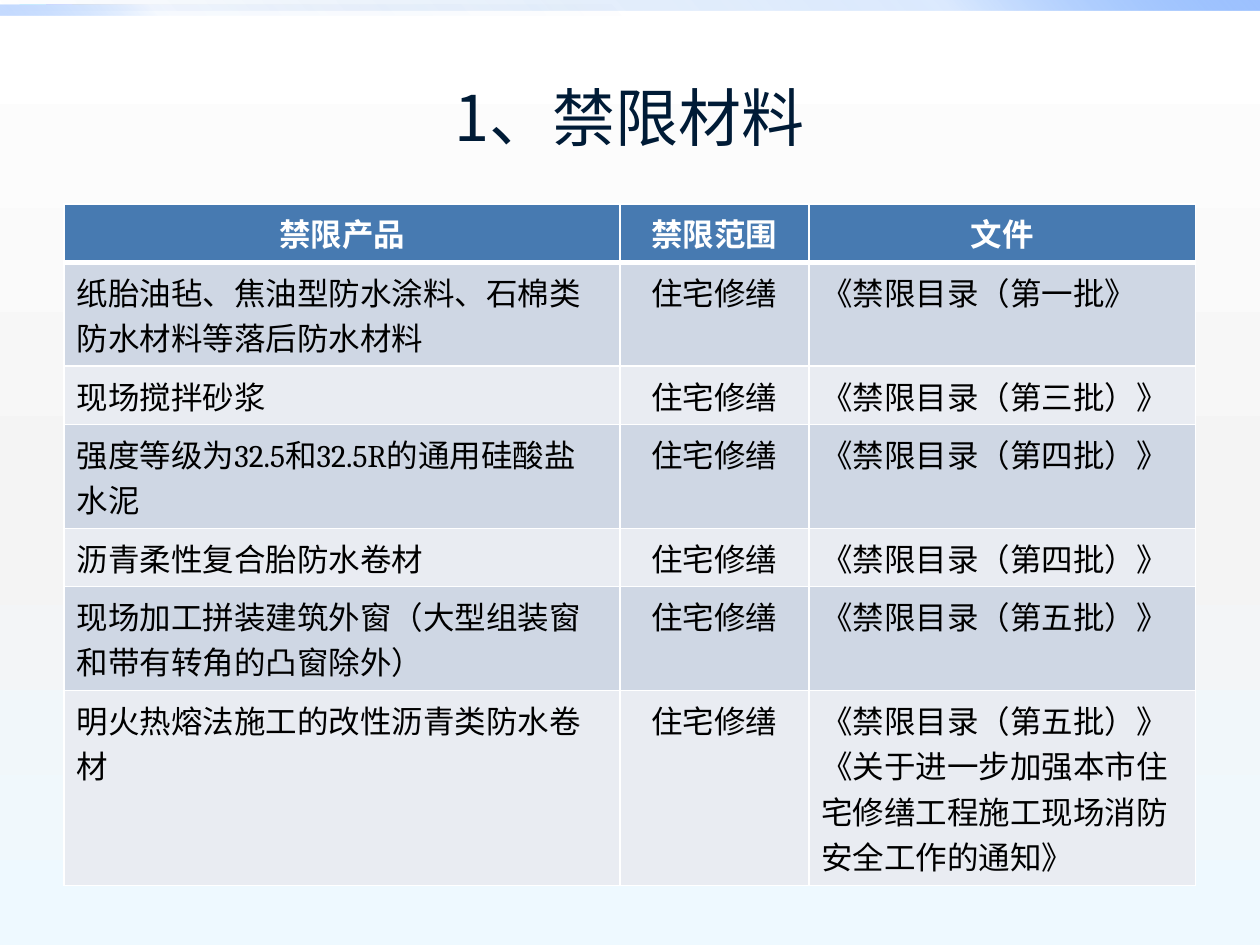
from lxml import etree
from pptx import Presentation
from pptx.dml.color import RGBColor
from pptx.enum.shapes import MSO_SHAPE
from pptx.enum.text import MSO_ANCHOR, PP_ALIGN
from pptx.oxml.ns import qn
from pptx.util import Inches, Pt

RECTANGLE = MSO_SHAPE.RECTANGLE
LEFT, CENTER = PP_ALIGN.LEFT, PP_ALIGN.CENTER
MIDDLE = MSO_ANCHOR.MIDDLE
TITLE_ONLY = 5

SCOPE = "住宅修缮"
HEADINGS = ["禁限产品", "禁限范围", "文件"]
RESTRICTIONS = [
    ("纸胎油毡、焦油型防水涂料、石棉类防水材料等落后防水材料", "《禁限目录（第一批》"),
    ("现场搅拌砂浆", "《禁限目录（第三批）》"),
    ("强度等级为32.5和32.5R的通用硅酸盐水泥", "《禁限目录（第四批）》"),
    ("沥青柔性复合胎防水卷材", "《禁限目录（第四批）》"),
    ("现场加工拼装建筑外窗（大型组装窗和带有转角的凸窗除外）", "《禁限目录（第五批）》"),
    ("明火热熔法施工的改性沥青类防水卷材",
     "《禁限目录（第五批）》 《关于进一步加强本市住宅修缮工程施工现场消防安全工作的通知》"),
]


def color(hex_value):
    return RGBColor.from_string(hex_value)


def write(frame, text, *, size, font, fill, bold=False, align=LEFT,
          east_asian="Noto Sans CJK SC"):
    frame.word_wrap = True
    paragraph = frame.paragraphs[0]
    paragraph.alignment = align
    run = paragraph.add_run()
    run.text = text
    run.font.size = Pt(size)
    run.font.bold = bold
    run.font.name = font
    run.font.color.rgb = color(fill)
    etree.SubElement(run.font._element, qn("a:ea"), typeface=east_asian)


def set_gradient(fill, owner, stops, angle):
    """Fill with (position %, colour, opacity %) stops; angle is clockwise."""
    fill.gradient()
    fill.gradient_angle = 360 - angle
    stop_list = owner.xpath(".//a:gradFill/a:gsLst")[0]
    for old_stop in list(stop_list):
        stop_list.remove(old_stop)
    for position, hex_value, opacity in stops:
        stop = etree.SubElement(stop_list, qn("a:gs"), pos=str(position * 1000))
        tint = etree.SubElement(stop, qn("a:srgbClr"), val=hex_value)
        if opacity < 100:
            etree.SubElement(tint, qn("a:alpha"), val=str(opacity * 1000))


def set_borders(cell, hex_value, **widths):
    """Draw cell borders, with widths in points keyed L, R, T and B."""
    properties = cell._tc.get_or_add_tcPr()
    for side, width in widths.items():
        line = etree.SubElement(properties, qn(f"a:ln{side}"), w=str(Pt(width)))
        solid = etree.SubElement(line, qn("a:solidFill"))
        etree.SubElement(solid, qn("a:srgbClr"), val=hex_value)


class SlideBuilder:
    title_font, table_font = "Noto Sans CJK SC", "Cambria"
    title_color, text_color, white = "001B36", "000000", "FFFFFF"
    header_fill, band_fills = "477AB1", ("CFD7E4", "E9ECF2")

    def __init__(self, presentation):
        layout = presentation.slide_layouts[TITLE_ONLY]
        self.slide = presentation.slides.add_slide(layout)

    def background(self, stops, angle):
        set_gradient(self.slide.background.fill, self.slide.element, stops, angle)

    def strip(self, left, top, width, height, stops, angle):
        strip = self.slide.shapes.add_shape(
            RECTANGLE, Inches(left), Inches(top), Inches(width), Inches(height))
        strip.shadow.inherit = False
        strip.line.fill.background()
        set_gradient(strip.fill, strip.element, stops, angle)

    def title(self, text, left, top, width, height):
        title = self.slide.shapes.title
        title.left, title.top = Inches(left), Inches(top)
        title.width, title.height = Inches(width), Inches(height)
        title.text_frame.vertical_anchor = MIDDLE
        write(title.text_frame, text, size=36, font=self.title_font,
              fill=self.title_color, align=CENTER)

    def table(self, rows, left, top, column_widths, row_height):
        """Add a table with a header row, banded body and centred second column."""
        table = self.slide.shapes.add_table(
            len(rows), len(column_widths), Inches(left), Inches(top),
            Inches(sum(column_widths)), Inches(row_height * len(rows))).table
        for column, width in zip(table.columns, column_widths):
            column.width = Inches(width)
        for r, row in enumerate(rows):
            header = r == 0
            fill = self.header_fill if header else self.band_fills[(r - 1) % 2]
            for c, text in enumerate(row):
                cell = table.cell(r, c)
                set_borders(cell, self.white, L=1, R=1,
                            T=3 if r == 1 else 1, B=3 if header else 1)
                cell.fill.solid()
                cell.fill.fore_color.rgb = color(fill)
                write(cell.text_frame, text, size=18, font=self.table_font,
                      fill=self.white if header else self.text_color,
                      bold=header, align=CENTER if header or c == 1 else LEFT)


def main():
    presentation = Presentation()
    presentation.slide_width, presentation.slide_height = Inches(10), Inches(7.5)

    builder = SlideBuilder(presentation)
    builder.background(
        [(0, "FFFFFF", 100), (55, "F4F4F4", 100), (100, "EEF9FF", 100)], 90)
    builder.strip(0, 0, 10, 0.08,
                  [(0, "0058B7", 0), (75, "4F95FF", 20), (100, "9EC2FF", 100)], 315)
    builder.strip(0, 0.04, 5, 0.08,
                  [(0, "0058B7", 0), (75, "4F95FF", 5), (100, "9EC2FF", 60)], 135)
    builder.title("1、禁限材料", 0, 0.3, 10, 1.25)
    body = [(product, SCOPE, document) for product, document in RESTRICTIONS]
    builder.table([HEADINGS, *body], 0.51, 1.62, [4.41, 1.5, 3.07], 0.41)

    presentation.save("out.pptx")


if __name__ == "__main__":
    main()
